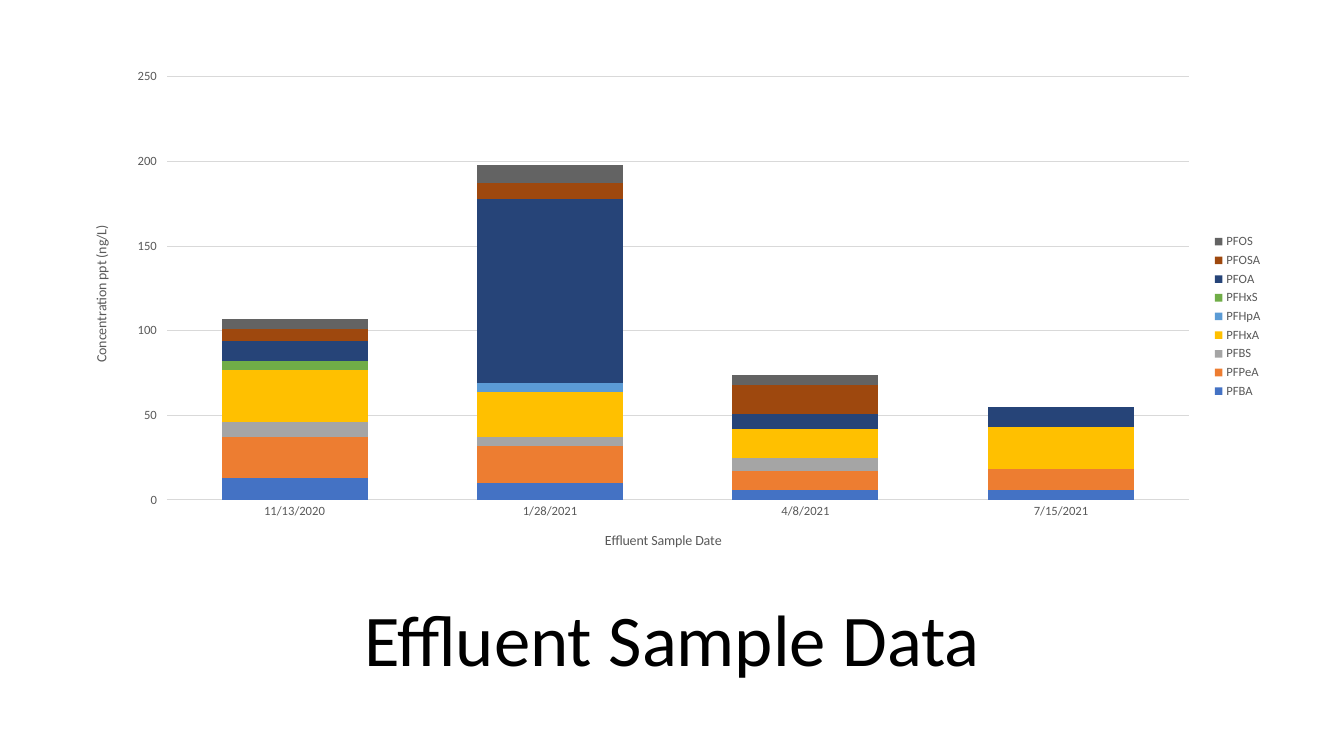
from pptx import Presentation
from pptx.chart.data import CategoryChartData
from pptx.dml.color import RGBColor
from pptx.enum.chart import XL_CHART_TYPE as ChartType
from pptx.enum.chart import XL_LEGEND_POSITION as LegendPosition
from pptx.enum.chart import XL_TICK_MARK as TickMark
from pptx.enum.text import MSO_ANCHOR as Anchor
from pptx.enum.text import PP_ALIGN as Align
from pptx.oxml import parse_xml
from pptx.oxml.ns import nsdecls, qn
from pptx.util import Cm, Pt

FONT = "Calibri"
BLACK = RGBColor(0x00, 0x00, 0x00)
GREY_TEXT = RGBColor(0x59, 0x59, 0x59)
GRID_GREY = RGBColor(0xD9, 0xD9, 0xD9)
BLUE = RGBColor(0x44, 0x72, 0xC4)
ORANGE = RGBColor(0xED, 0x7D, 0x31)
GREY = RGBColor(0xA5, 0xA5, 0xA5)
GOLD = RGBColor(0xFF, 0xC0, 0x00)
LIGHT_BLUE = RGBColor(0x5B, 0x9B, 0xD5)
GREEN = RGBColor(0x70, 0xAD, 0x47)
NAVY = RGBColor(0x26, 0x44, 0x78)
BROWN = RGBColor(0x9E, 0x48, 0x0E)
DARK_GREY = RGBColor(0x63, 0x63, 0x63)

SAMPLE_DATES = ["11/13/2020", "1/28/2021", "4/8/2021", "7/15/2021"]
COMPOUNDS = [
    ("PFBA", (13, 10, 6, 6), BLUE),
    ("PFPeA", (24, 22, 11, 12), ORANGE),
    ("PFBS", (9, 5, 8, 0), GREY),
    ("PFHxA", (31, 27, 17, 25), GOLD),
    ("PFHpA", (0, 5, 0, 0), LIGHT_BLUE),
    ("PFHxS", (5, 0, 0, 0), GREEN),
    ("PFOA", (12, 109, 9, 12), NAVY),
    ("PFOSA", (7, 9, 17, 0), BROWN),
    ("PFOS", (6, 11, 6, 0), DARK_GREY),
]


def style_font(font, size, color):
    font.name = FONT
    font.size = Pt(size)
    font.bold = False
    font.color.rgb = color


def style_line(line, color):
    line.color.rgb = color
    line.width = Pt(0.75)


def add_text(page, text, left, top, width, height, size, color=BLACK, align=Align.CENTER):
    box = page.shapes.add_textbox(left, top, width, height)
    frame = box.text_frame
    frame.word_wrap = True
    frame.vertical_anchor = Anchor.MIDDLE
    para = frame.paragraphs[0]
    para.alignment = align
    para.line_spacing = 0.9
    span = para.add_run()
    span.text = text
    style_font(span.font, size, color)


def style_axis(axis, title):
    style_font(axis.tick_labels.font, 9, GREY_TEXT)
    axis.minor_tick_mark = TickMark.NONE
    frame = axis.axis_title.text_frame
    frame.text = title
    style_font(frame.paragraphs[0].runs[0].font, 10, GREY_TEXT)


def place_plot(chart, **fractions):
    area = chart.element.find(".//" + qn("c:plotArea"))
    for layout in area.findall(qn("c:layout")):
        area.remove(layout)
    places = "".join(f'<c:{name} val="{value}"/>' for name, value in fractions.items())
    area.insert(0, parse_xml(
        f'<c:layout {nsdecls("c")}><c:manualLayout><c:layoutTarget val="inner"/>'
        f'<c:xMode val="edge"/><c:yMode val="edge"/>{places}</c:manualLayout></c:layout>'))


def add_stacked_chart(page, left, top, width, height):
    data = CategoryChartData()
    data.categories = SAMPLE_DATES
    for name, values, _ in COMPOUNDS:
        data.add_series(name, values)
    chart = page.shapes.add_chart(
        ChartType.COLUMN_STACKED, left, top, width, height, data).chart
    style_font(chart.font, 10, BLACK)
    chart.has_title = False

    plot = chart.plots[0]
    plot.gap_width = 75
    plot.overlap = 100
    plot.vary_by_categories = False
    for series, (_, _, color) in zip(plot.series, COMPOUNDS):
        series.format.fill.solid()
        series.format.fill.fore_color.rgb = color

    dates = chart.category_axis
    style_axis(dates, "Effluent Sample Date")
    dates.major_tick_mark = TickMark.NONE
    style_line(dates.format.line, GRID_GREY)

    levels = chart.value_axis
    style_axis(levels, "Concentration ppt (ng/L)")
    levels.minimum_scale = 0
    levels.maximum_scale = 250
    levels.major_unit = 50
    levels.major_tick_mark = TickMark.OUTSIDE
    levels.format.line.fill.background()
    style_line(levels.major_gridlines.format.line, GRID_GREY)

    chart.has_legend = True
    chart.legend.position = LegendPosition.RIGHT
    chart.legend.include_in_layout = False
    style_font(chart.legend.font, 9, GREY_TEXT)
    place_plot(chart, x=0.08, y=0.03, w=0.85, h=0.83)


def main():
    deck = Presentation()
    deck.slide_width = Cm(33.87)
    deck.slide_height = Cm(19.05)
    page = deck.slides.add_slide(deck.slide_layouts[6])
    add_text(page, "Effluent Sample Data", Cm(2.33), Cm(14.88), Cm(29.21), Cm(2.62), size=52)
    add_stacked_chart(page, Cm(1.78), Cm(1.55), Cm(30.3), Cm(12.85))
    deck.save("out.pptx")


if __name__ == "__main__":
    main()
